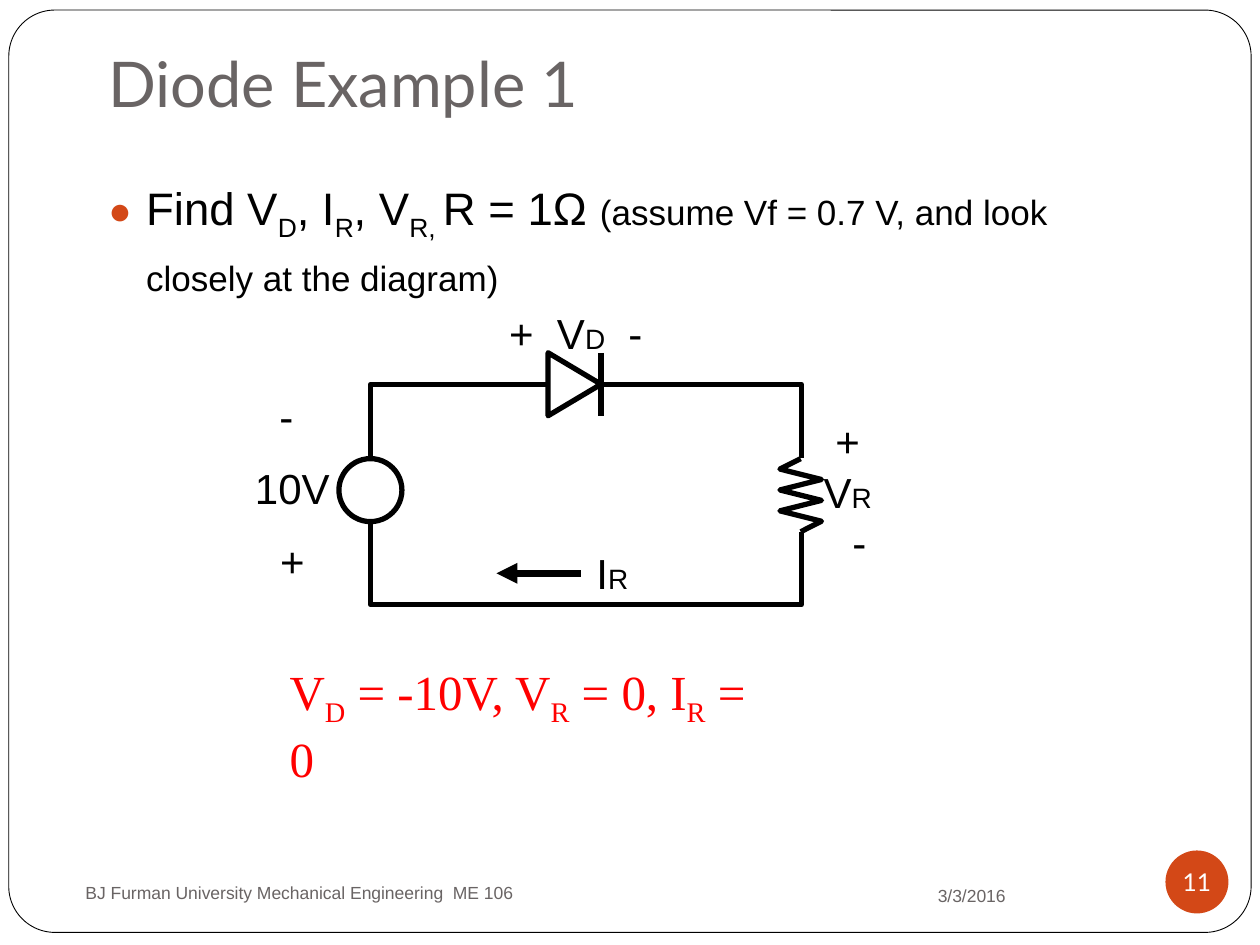
"""Build the Diode Example 1 slide with its circuit diagram."""
from dataclasses import dataclass
from typing import Any, NamedTuple

from lxml.etree import SubElement
from pptx import Presentation
from pptx.dml.color import RGBColor
from pptx.enum.shapes import MSO_CONNECTOR, MSO_SHAPE as Preset
from pptx.enum.text import MSO_ANCHOR as Anchor, MSO_AUTO_SIZE as AutoSize, PP_ALIGN as Align
from pptx.oxml.ns import qn
from pptx.util import Inches, Pt

COLORS = {"ink": "000000", "paper": "FFFFFF", "gray": "696464", "accent": "D34817", "answer": "FF0000"}


class Piece(NamedTuple):
    text: str
    size: float
    sub: bool = False


class Box(NamedTuple):
    left: float
    top: float
    width: float
    height: float

    def lengths(self) -> list[int]:
        return [Inches(value) for value in self]


@dataclass(frozen=True)
class Label:
    box: Box
    paragraphs: list[list[Piece]]
    color: str = "ink"
    font: str = "Arial"
    align: Align = Align.CENTER
    anchor: Anchor = Anchor.TOP


@dataclass(frozen=True)
class Part:
    preset: Preset
    box: Box
    fill: str | None = "paper"
    line: str | None = "ink"
    weight: float = 3
    rotation: float = 0


def rgb(name: str) -> RGBColor:
    return RGBColor.from_string(COLORS[name])


def write_pieces(paragraph: Any, pieces: list[Piece], font: str, color: str) -> None:
    for piece in pieces:
        for index, line in enumerate(piece.text.split("\n")):
            if index:
                paragraph.add_line_break()
            run = paragraph.add_run()
            run.text = line
            run.font.name, run.font.size = font, Pt(piece.size)
            run.font.color.rgb = rgb(color)
            if piece.sub:
                run._r.get_or_add_rPr().set("baseline", "-25000")


def fill_label(shape: Any, label: Label) -> None:
    frame = shape.text_frame
    frame.word_wrap, frame.auto_size = True, AutoSize.NONE
    frame.vertical_anchor = label.anchor
    for index, pieces in enumerate(label.paragraphs):
        paragraph = frame.add_paragraph() if index else frame.paragraphs[0]
        paragraph.alignment = label.align
        if index:
            paragraph.space_before = Pt(12.5)
        write_pieces(paragraph, pieces, label.font, label.color)


def add_label(shapes: Any, label: Label) -> None:
    fill_label(shapes.add_textbox(*label.box.lengths()), label)


def place(shape: Any, box: Box) -> None:
    shape.left, shape.top, shape.width, shape.height = box.lengths()


def paint(shape: Any, fill: str | None, line: str | None, weight: float) -> None:
    shape.shadow.inherit = False
    if fill:
        shape.fill.solid()
        shape.fill.fore_color.rgb = rgb(fill)
    else:
        shape.fill.background()
    if line:
        shape.line.color.rgb = rgb(line)
        shape.line.width = Pt(weight)
    else:
        shape.line.fill.background()


def add_part(shapes: Any, part: Part) -> Any:
    shape = shapes.add_shape(part.preset, *part.box.lengths())
    shape.rotation = part.rotation
    paint(shape, part.fill, part.line, part.weight)
    return shape


def add_line(shapes: Any, start: tuple[float, float], end: tuple[float, float],
             weight: float, arrow: bool = False) -> None:
    line = shapes.add_connector(MSO_CONNECTOR.STRAIGHT, *map(Inches, start + end))
    line.line.color.rgb = rgb("ink")
    line.line.width = Pt(weight)
    props = line._element.spPr
    if arrow:
        SubElement(props.get_or_add_ln(), qn("a:tailEnd"), type="triangle")
    SubElement(props, qn("a:effectLst"))


def add_resistor(shapes: Any, box: Box) -> None:
    teeth = 7
    middle = box.left + box.width / 2
    points = [(box.left + box.width * (step % 2), box.top + (step + 1) * box.height / teeth)
              for step in range(teeth - 1)]
    points.append((middle, box.top + box.height))
    builder = shapes.build_freeform(Inches(middle), Inches(box.top))
    builder.add_line_segments([(Inches(x), Inches(y)) for x, y in points], close=False)
    paint(builder.convert_to_shape(), None, "ink", 3)


def add_circuit(shapes: Any) -> None:
    for part in (
        Part(Preset.RECTANGLE, Box(2.94, 3.05, 3.42, 1.75), fill=None),
        Part(Preset.OVAL, Box(2.69, 3.64, 0.5, 0.5)),
        Part(Preset.ISOSCELES_TRIANGLE, Box(4.31, 2.84, 0.5, 0.42), rotation=90),
        Part(Preset.RECTANGLE, Box(6.02, 3.64, 0.67, 0.58), line="paper", weight=0.75),
    ):
        add_part(shapes, part)
    add_line(shapes, (4.77, 2.8), (4.77, 3.3), 3)
    add_resistor(shapes, Box(6.19, 3.64, 0.33, 0.58))
    add_line(shapes, (4.61, 4.55), (3.94, 4.55), 4, arrow=True)
    for label in (
        Label(Box(3.86, 2.39, 1.42, 0.5), [[Piece("+  V", 24), Piece("D", 16), Piece("  -", 24)]]),
        Label(Box(6.11, 3.25, 1.42, 1.3), [[Piece("+  \nV", 24), Piece("R", 16), Piece("  \n-", 24)]]),
        Label(Box(4.36, 4.3, 1, 0.5), [[Piece("I", 24), Piece("R", 16)]]),
        Label(Box(1.86, 3.05, 0.92, 1.7), [[Piece(text, 24)] for text in ("- ", "10V", "+")]),
    ):
        add_label(shapes, label)


def add_frame(shapes: Any) -> None:
    frame = add_part(shapes, Part(Preset.ROUNDED_RECTANGLE, Box(0.07, 0.08, 9.86, 7.32), weight=0.5))
    frame.adjustments[0] = 0.05
    shapes._spTree.insert(2, frame._element)


def fill_title(title: Any) -> None:
    label = Label(Box(0.76, 0.28, 9, 0.77), [[Piece("Diode Example 1", 36)]],
                  "gray", "Lato", Align.LEFT, Anchor.BOTTOM)
    place(title, label.box)
    fill_label(title, label)
    title.text_frame.margin_bottom = Inches(0.1)


def fill_task(body: Any) -> None:
    task = [Piece("Find V", 26), Piece("D", 26, True), Piece(", I", 26), Piece("R", 26, True),
            Piece(", V", 26), Piece("R, ", 26, True), Piece("R = 1Ω ", 26),
            Piece("(assume Vf = 0.7 V, and look closely at the diagram)", 20), Piece(" ", 28)]
    label = Label(Box(0.76, 1.38, 8.04, 1.18), [task], align=Align.LEFT)
    place(body, label.box)
    fill_label(body, label)
    paragraph = body.text_frame.paragraphs[0]
    paragraph.space_before = Pt(5.8)
    props = paragraph._p.get_or_add_pPr()
    props.set("marL", str(Inches(0.3)))
    props.set("indent", str(Inches(-0.3)))
    SubElement(SubElement(props, qn("a:buClr")), qn("a:srgbClr"), val=COLORS["accent"])
    SubElement(props, qn("a:buSzPct"), val="85000")
    SubElement(props, qn("a:buChar"), char="●")


def add_page_number(shapes: Any) -> None:
    box = Box(9.25, 6.75, 0.5, 0.5)
    badge = add_part(shapes, Part(Preset.OVAL, box, fill="accent", line=None))
    fill_label(badge, Label(box, [[Piece("11", 14)]], "paper", "Lato", anchor=Anchor.MIDDLE))
    frame = badge.text_frame
    frame.word_wrap = False
    frame.margin_left = frame.margin_right = frame.margin_top = frame.margin_bottom = 0


def main() -> None:
    deck = Presentation()
    deck.slide_width, deck.slide_height = Inches(10), Inches(7.5)
    slide = deck.slides.add_slide(deck.slide_layouts[1])
    shapes = slide.shapes
    add_frame(shapes)
    fill_title(shapes.title)
    fill_task(slide.placeholders[1])
    add_circuit(shapes.add_group_shape().shapes)
    answer = [Piece("V", 28), Piece("D", 28, True), Piece(" = -10V, V", 28), Piece("R", 28, True),
              Piece(" = 0, I", 28), Piece("R", 28, True), Piece(" = 0", 28)]
    add_label(shapes, Label(Box(2.2, 5.2, 3.9, 0.57), [answer], "answer", "Times New Roman", Align.LEFT))
    add_label(shapes, Label(Box(6.75, 6.96, 1.33, 0.29), [[Piece("3/3/2016", 10)]],
                            "gray", align=Align.RIGHT, anchor=Anchor.MIDDLE))
    add_label(shapes, Label(Box(0.58, 6.92, 4.92, 0.33),
                            [[Piece("BJ Furman University Mechanical Engineering  ME 106", 10)]],
                            "gray", align=Align.LEFT, anchor=Anchor.MIDDLE))
    add_page_number(shapes)
    deck.save("out.pptx")


if __name__ == "__main__":
    main()
